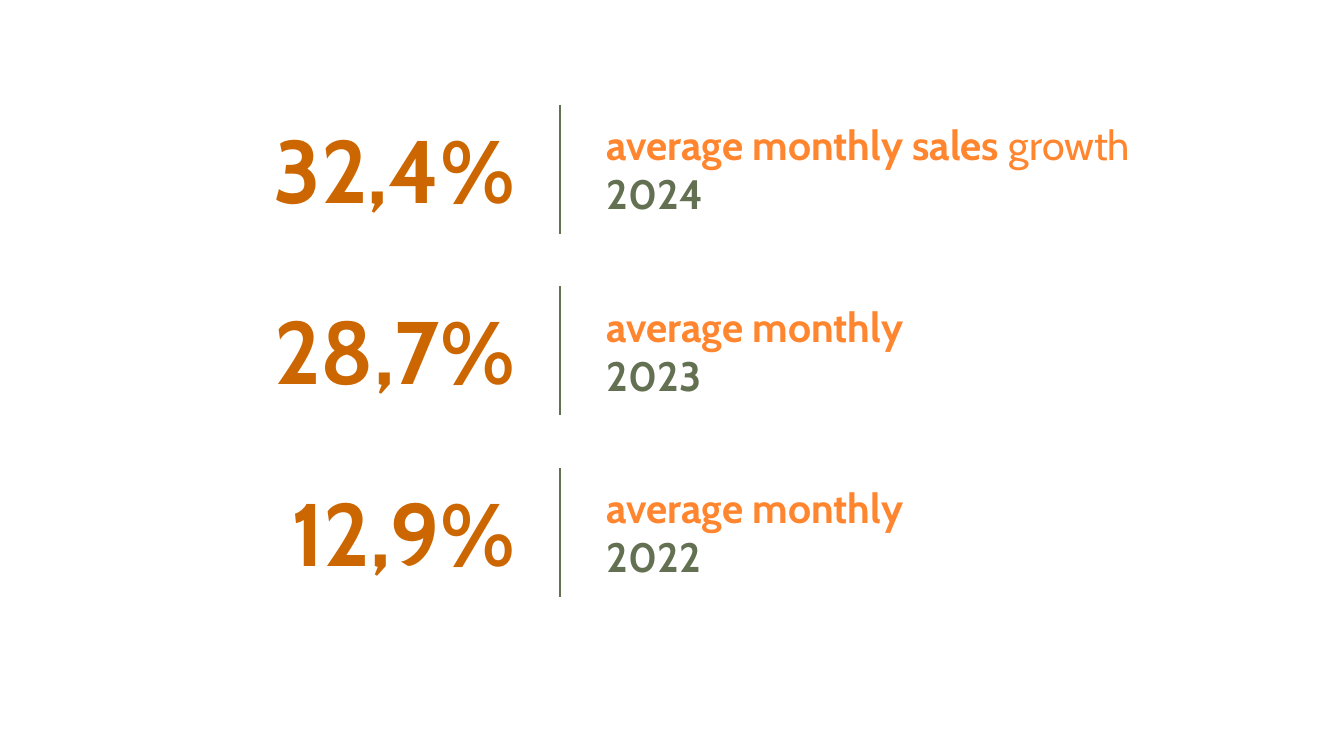
from dataclasses import dataclass

from pptx import Presentation
from pptx.dml.color import RGBColor
from pptx.enum.shapes import MSO_CONNECTOR
from pptx.enum.text import MSO_AUTO_SIZE, PP_ALIGN
from pptx.oxml.ns import qn
from pptx.util import Inches, Pt
from lxml.etree import SubElement


@dataclass(frozen=True)
class Theme:
    font: str = "Cabin"
    figure_color: str = "CC6600"
    label_color: str = "FF862E"
    accent_color: str = "637052"
    background: str = "FFFFFF"
    figure_size: int = 95
    label_size: int = 44
    line_width: int = 2


class SlideBuilder:
    def __init__(self, slide, theme):
        self.slide = slide
        self.theme = theme
        fill = slide.background.fill
        fill.solid()
        fill.fore_color.rgb = RGBColor.from_string(theme.background)

    def text(self, left, top, width, height, paragraphs, size, alignment=PP_ALIGN.LEFT):
        shape = self.slide.shapes.add_textbox(
            Inches(left), Inches(top), Inches(width), Inches(height)
        )
        frame = shape.text_frame
        frame.word_wrap = True
        frame.auto_size = MSO_AUTO_SIZE.SHAPE_TO_FIT_TEXT
        for index, runs in enumerate(paragraphs):
            paragraph = frame.add_paragraph() if index else frame.paragraphs[0]
            paragraph.alignment = alignment
            for words, color, bold in runs:
                run = paragraph.add_run()
                run.text = words
                run.font.color.rgb = RGBColor.from_string(color)
                style = {"name": self.theme.font, "size": Pt(size), "bold": bold}
                for name, value in style.items():
                    setattr(run.font, name, value)

    def divider(self, left, top, height):
        connector = self.slide.shapes.add_connector(
            MSO_CONNECTOR.STRAIGHT,
            Inches(left), Inches(top), Inches(left), Inches(top + height),
        )
        connector.line.color.rgb = RGBColor.from_string(self.theme.accent_color)
        connector.line.width = Pt(self.theme.line_width)
        SubElement(connector._element.spPr, qn("a:effectLst"))

    def growth_row(self, top, figure, label, light_label, year):
        theme = self.theme
        label_runs = [(label, theme.label_color, True)]
        if light_label:
            label_runs.append((light_label, theme.label_color, False))
        year_runs = [(year, theme.accent_color, True)]
        self.text(8.93, top + 0.17, 10.58, 1.58, [label_runs, year_runs], theme.label_size)
        self.divider(8.34, top, 1.92)
        self.text(
            2.93, top + 0.1, 4.83, 1.7,
            [[(figure, theme.figure_color, True)]], theme.figure_size, PP_ALIGN.RIGHT,
        )


def main():
    presentation = Presentation()
    presentation.slide_width = Inches(20)
    presentation.slide_height = Inches(11.25)
    slide = presentation.slides.add_slide(presentation.slide_layouts[6])
    builder = SlideBuilder(slide, Theme())
    rows = [
        ("32,4%", "average monthly sales ", "growth", "2024"),
        ("28,7%", "average monthly", "", "2023"),
        ("12,9%", "average monthly", "", "2022"),
    ]
    first_top, row_pitch = 1.56, 2.7
    for index, row in enumerate(rows):
        builder.growth_row(first_top + index * row_pitch, *row)
    presentation.save("out.pptx")


if __name__ == "__main__":
    main()
